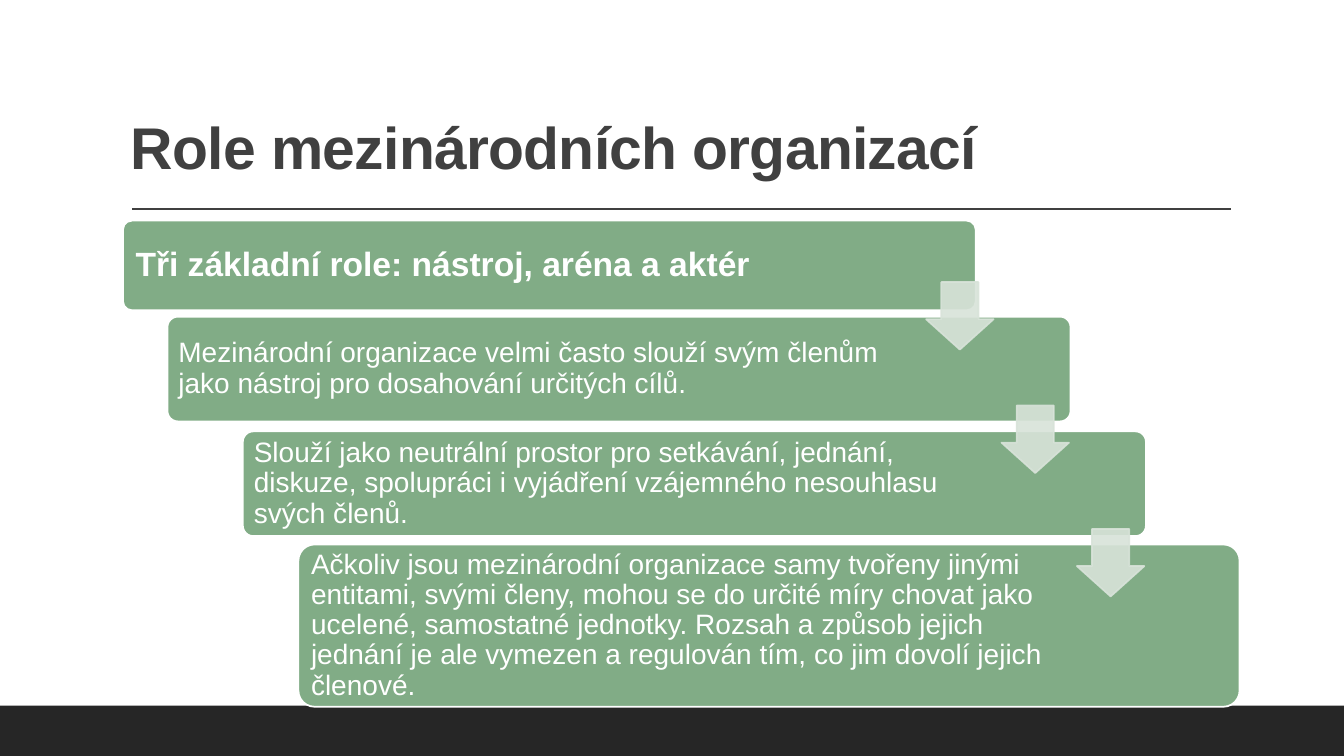
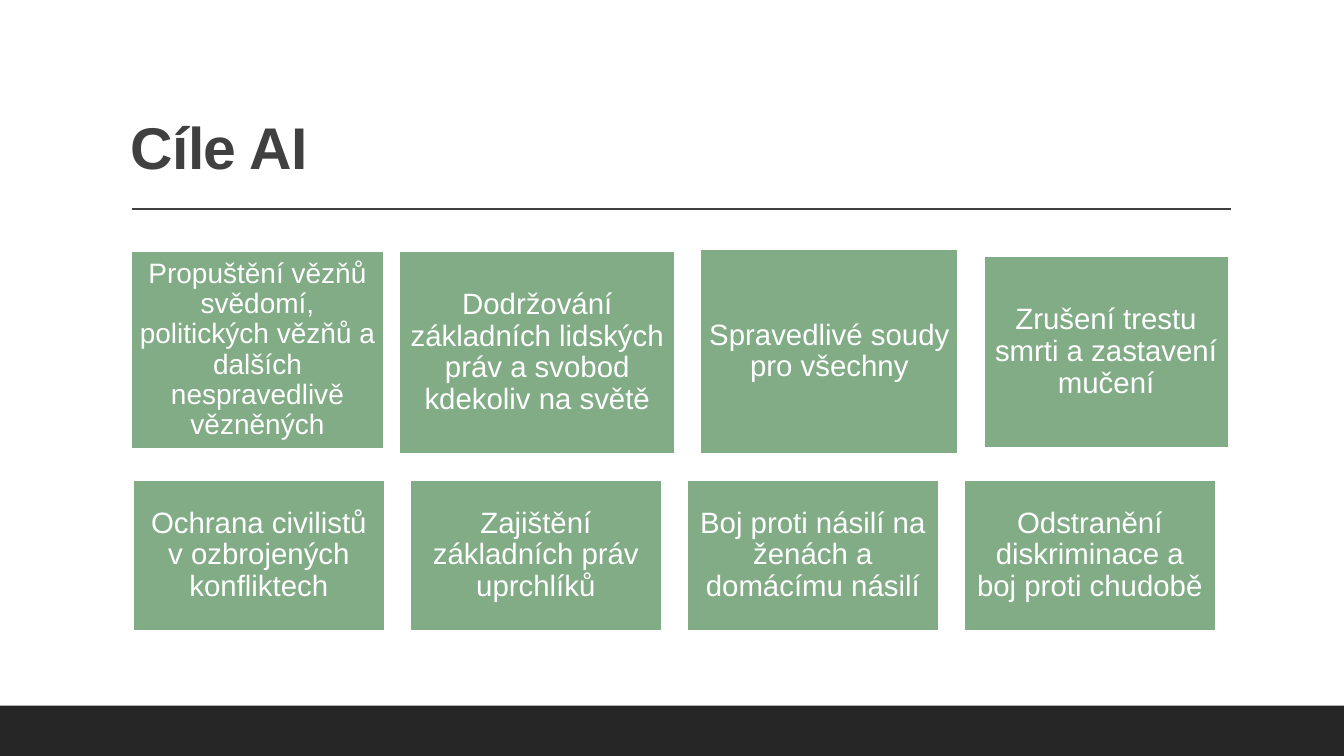
from dataclasses import dataclass

from lxml.etree import SubElement
from pptx import Presentation
from pptx.dml.color import RGBColor
from pptx.enum.shapes import MSO_CONNECTOR, MSO_SHAPE
from pptx.enum.text import MSO_ANCHOR, PP_ALIGN
from pptx.oxml.ns import qn
from pptx.util import Cm, Pt


@dataclass(frozen=True)
class Theme:
    font: str = "Arial"
    ink: str = "404040"
    band: str = "262626"
    panel: str = "81AC86"
    arrow: str = "D8E3D9"
    white: str = "FFFFFF"
    title_size: int = 42
    heading_size: int = 24
    tile_size: int = 21
    body_size: int = 20
    outline: float = 1.25
    rule: float = 1


def write_text(frame, text, *, font, size, color, bold=False, tracking=0,
               align=PP_ALIGN.LEFT, anchor=MSO_ANCHOR.MIDDLE,
               inset=0.25, right=None):
    frame.word_wrap = True
    frame.vertical_anchor = anchor
    frame.margin_left = frame.margin_top = frame.margin_bottom = Cm(inset)
    frame.margin_right = Cm(inset if right is None else right)
    para = frame.paragraphs[0]
    para.alignment = align
    para.line_spacing = 0.9
    span = para.add_run()
    span.text = text
    span.font.name = font
    span.font.size = Pt(size)
    span.font.bold = bold
    span.font.color.rgb = RGBColor.from_string(color)
    if tracking:
        span._r.get_or_add_rPr().set("spc", str(round(tracking * 100)))


def set_opacity(shape, percent):
    for color in shape._element.spPr.iter(qn("a:srgbClr")):
        SubElement(color, qn("a:alpha")).set("val", str(percent * 1000))


class SlideBuilder:
    def __init__(self, deck, theme):
        self.deck = deck
        self.theme = theme
        self.page = None

    def start_page(self, title):
        self.page = self.deck.slides.add_slide(self.deck.slide_layouts[6])
        self.shape(MSO_SHAPE.RECTANGLE, (0, 17.78, 33.87, 1.27), self.theme.band)
        self.rule(3.33, 31.01, 5.27)
        box = self.page.shapes.add_textbox(Cm(3.05), Cm(0.79), Cm(27.94), Cm(4.04))
        write_text(box.text_frame, title, font=self.theme.font,
                   size=self.theme.title_size, color=self.theme.ink, bold=True,
                   tracking=-0.5, anchor=MSO_ANCHOR.BOTTOM, inset=0.25)

    def rule(self, left, right, top):
        line = self.page.shapes.add_connector(
            MSO_CONNECTOR.STRAIGHT, Cm(left), Cm(top), Cm(right), Cm(top))
        line.line.color.rgb = RGBColor.from_string(self.theme.ink)
        line.line.width = Pt(self.theme.rule)
        SubElement(line._element.spPr, qn("a:effectLst"))

    def shape(self, kind, bounds, fill, outline=None, adjustments=()):
        shape = self.page.shapes.add_shape(kind, *map(Cm, bounds))
        shape.shadow.inherit = False
        shape.fill.solid()
        shape.fill.fore_color.rgb = RGBColor.from_string(fill)
        if outline:
            shape.line.color.rgb = RGBColor.from_string(outline)
            shape.line.width = Pt(self.theme.outline)
        else:
            shape.line.fill.background()
        for index, value in enumerate(adjustments):
            shape.adjustments[index] = value
        return shape

    def panel(self, kind, bounds, text, adjustments=(), **text_format):
        shape = self.shape(kind, bounds, self.theme.panel, self.theme.white, adjustments)
        write_text(shape.text_frame, text, font=self.theme.font,
                   color=self.theme.white, **text_format)

    def step(self, bounds, text, **text_format):
        self.panel(MSO_SHAPE.ROUNDED_RECTANGLE, bounds, text, (0.1,),
                   right=4, **text_format)

    def tile(self, bounds, text, **text_format):
        self.panel(MSO_SHAPE.RECTANGLE, bounds, text,
                   align=PP_ALIGN.CENTER, **text_format)

    def down_arrow(self, left, top):
        arrow = self.shape(MSO_SHAPE.DOWN_ARROW, (left, top, 1.7, 1.7),
                           self.theme.arrow, self.theme.arrow, (0.55, 0.45))
        set_opacity(arrow, 90)


def build_roles(builder):
    theme = builder.theme
    builder.start_page("Role mezinárodních organizací")
    builder.step((3.1, 5.56, 21.49, 2.26), "Tři základní role: nástroj, aréna a aktér",
                 size=theme.heading_size, bold=True)
    steps = [
        ((4.22, 7.98, 22.76, 2.64),
         "Mezinárodní organizace velmi často slouží svým členům jako nástroj "
         "pro dosahování určitých cílů."),
        ((6.12, 10.87, 22.76, 2.64),
         "Slouží jako neutrální prostor pro setkávání, jednání, diskuze, "
         "spolupráci i vyjádření vzájemného nesouhlasu svých členů."),
        ((7.52, 13.72, 23.72, 4.09),
         "Ačkoliv jsou mezinárodní organizace samy tvořeny jinými entitami, "
         "svými členy, mohou se do určité míry chovat jako ucelené, samostatné "
         "jednotky. Rozsah a způsob jejich jednání je ale vymezen a regulován "
         "tím, co jim dovolí jejich členové."),
    ]
    for bounds, text in steps:
        builder.step(bounds, text, size=theme.body_size, inset=0.2)
    for index in range(len(steps)):
        builder.down_arrow(23.34 + 1.9 * index, 7.11 + 3.11 * index)


def build_goals(builder):
    theme = builder.theme
    builder.start_page("Cíle AI")
    upper_tiles = [
        ((3.3, 6.33, 6.38, 4.98), theme.body_size,
         "Propuštění vězňů svědomí, politických vězňů a dalších "
         "nespravedlivě vězněných"),
        ((10.06, 6.33, 6.96, 5.1), theme.tile_size,
         "Dodržování základních lidských práv a svobod kdekoliv na světě"),
        ((17.65, 6.27, 6.5, 5.18), theme.tile_size, "Spravedlivé soudy pro všechny"),
        ((24.79, 6.45, 6.17, 4.83), theme.tile_size,
         "Zrušení trestu smrti a zastavení mučení"),
    ]
    for bounds, size, text in upper_tiles:
        builder.tile(bounds, text, size=size, inset=0.2)
    lower_texts = [
        "Ochrana civilistů v ozbrojených konfliktech",
        "Zajištění základních práv uprchlíků",
        "Boj proti násilí na ženách a domácímu násilí",
        "Odstranění diskriminace a boj proti chudobě",
    ]
    for index, text in enumerate(lower_texts):
        builder.tile((3.35 + 6.98 * index, 12.09, 6.35, 3.81), text,
                     size=theme.tile_size, inset=0.23)


def main():
    deck = Presentation()
    deck.slide_width = Cm(33.87)
    deck.slide_height = Cm(19.05)
    builder = SlideBuilder(deck, Theme())
    build_roles(builder)
    build_goals(builder)
    deck.save("out.pptx")


if __name__ == "__main__":
    main()
